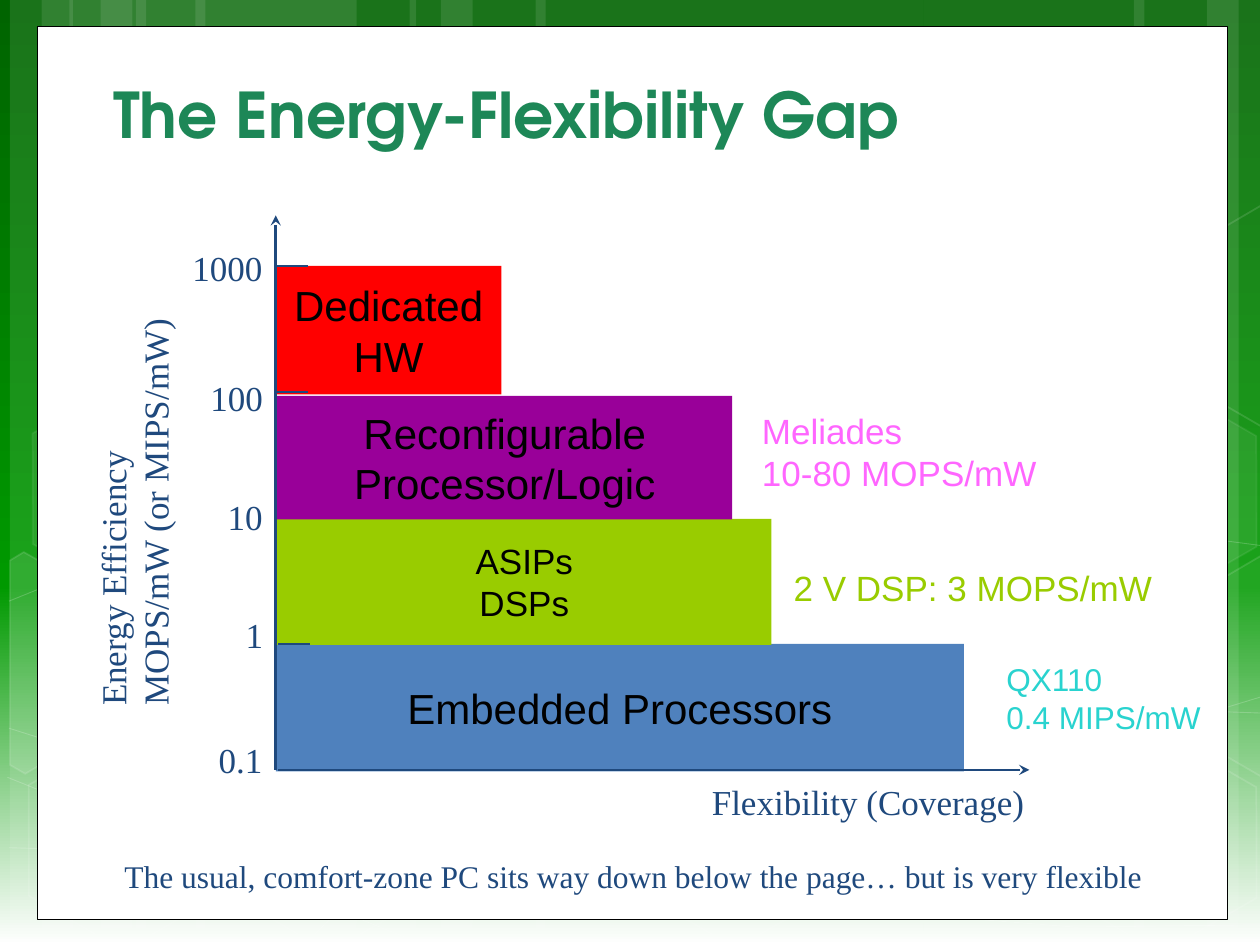
from copy import deepcopy
from dataclasses import dataclass

from lxml import etree
from pptx import Presentation
from pptx import util as u
from pptx.dml import color
from pptx.enum import shapes, text
from pptx.oxml import ns


@dataclass(frozen=True)
class Theme:
    ink: str = "1F497D"
    title: str = "1D8757"
    white: str = "FFFFFF"
    black: str = "000000"
    blue: str = "4F81BD"
    cyan: str = "29D3CF"
    lime: str = "99CC00"
    red: str = "FF0000"
    purple: str = "990099"
    pink: str = "FF66FF"
    backdrop: tuple = ((0, "006400"), (62, "009900"), (100, "FFFFFF"))
    sans: str = "Arial"
    serif: str = "Times New Roman"
    display: str = "TeX Gyre Adventor"
    heading: int = 36
    large: int = 24
    medium: int = 20
    small: int = 18


THEME = Theme()
AXIS_X, AXIS_Y = 5.56, 15.52

STRIPS = [(2.74, 4.45), (0.2, 1.27), (0.84, 2.11), (3.94, 4.45),
          (1.4, 1.27), (2.03, 2.11), (18.62, 4.45), (24.33, 1.27),
          (22.86, 2.11), (10.8, 7.82), (8.26, 1.27), (8.89, 2.11)]
WAVES = [
    [(0.18, 17.09), (4.83, 17.22), (11.63, 16.89), (20.12, 15.67), (25.58, 14)],
    [(0.18, 12.12), (3.07, 10.95), (8.81, 9.83), (16.61, 9.83), (25.58, 11.02)],
    [(0.15, 15.67), (8.48, 19.02)],
    [(0.18, 14.68), (3.25, 15.65), (9.07, 17.09), (15.95, 18.24),
     (21.67, 18.69), (25.58, 18.64)],
    [(6.15, 19.02), (7.67, 17.55), (9.86, 16.23), (11.94, 15.47),
     (15.44, 14.68), (20.17, 14.27), (22.5, 14.27), (25.55, 14.38)],
]
HEXAGONS = [(12.62, 14.96, 6, 12), (0.28, 15.01, 0, 12), (0.36, 7.92, 7, 8),
            (4.42, 15.04, 0, 12), (21.18, 15.06, 0, 12), (21.18, 7.98, 7, 8)]
CUT_HEXAGONS = [
    (10, [(0.2, 11.3), (0.48, 11.13), (2.44, 12.24), (2.41, 14.48),
          (0.51, 15.6), (0.2, 15.42)]),
    (4, [(23.52, 12.32), (25.43, 11.2), (25.63, 11.33), (25.63, 15.57),
         (25.45, 15.67), (23.52, 14.55)]),
    (0, [(23.52, 5.26), (25.43, 4.14), (25.65, 4.27), (25.63, 8.51),
         (25.45, 8.61), (23.52, 7.49)]),
]
SCALE = [("1000", 4.85, 1.93), ("100", 7.47, 1.57), ("10", 9.86, 1.22),
         ("1", 12.24, 0.86), ("0.1", 14.76, 1.4)]


def rgb(code):
    return color.RGBColor.from_string(code)


def cm(*lengths):
    return [u.Cm(length) for length in lengths]


def set_all(target, values):
    for name, value in values.items():
        setattr(target, name, value)


def paint(fill, code, opacity=100):
    if not opacity:
        fill.background()
        return
    fill.solid()
    fill.fore_color.rgb = rgb(code)


def fade(part, opacity):
    for tint in part.iter(ns.qn("a:srgbClr")):
        etree.SubElement(tint, ns.qn("a:alpha"), val=str(opacity * 1000))


def finish(shape, fill, fill_opacity=100, line=None, width=1, line_opacity=100):
    shape.shadow.inherit = False
    paint(shape.fill, fill, fill_opacity)
    if fill_opacity not in (0, 100):
        fade(shape.element.spPr.find(ns.qn("a:solidFill")), fill_opacity)
    if line is None:
        shape.line.fill.background()
        return
    paint(shape.line.fill, line)
    shape.line.width = u.Pt(width)
    if line_opacity != 100:
        fade(shape.element.spPr.find(ns.qn("a:ln")), line_opacity)


def write(frame, words, font, size, code, align=text.PP_ALIGN.LEFT,
          anchor=text.MSO_ANCHOR.TOP, bold=False, wrap=False):
    frame.text = words
    set_all(frame, {"word_wrap": wrap, "vertical_anchor": anchor})
    for paragraph in frame.paragraphs:
        paragraph.alignment = align
        for run in paragraph.runs:
            set_all(run.font, {"name": font, "size": u.Pt(size), "bold": bold})
            run.font.color.rgb = rgb(code)


def add_block(slide, box, kind=shapes.MSO_SHAPE.RECTANGLE, **look):
    block = slide.shapes.add_shape(kind, *cm(*box))
    finish(block, **look)
    return block


def add_outline(slide, points, closed, **look):
    corners = [tuple(cm(*point)) for point in points]
    builder = slide.shapes.build_freeform(*corners[0])
    builder.add_line_segments(corners[1:], close=closed)
    finish(builder.convert_to_shape(), **look)


def add_bar(slide, words, box, fill, size=THEME.large):
    bar = add_block(slide, box, fill=fill)
    write(bar.text_frame, words, THEME.sans, size, THEME.black,
          text.PP_ALIGN.CENTER, text.MSO_ANCHOR.MIDDLE)


def add_label(slide, words, box, code=THEME.ink, font=THEME.serif,
              size=THEME.medium, rotation=0):
    label = slide.shapes.add_textbox(*cm(*box))
    label.rotation = rotation
    write(label.text_frame, words, font, size, code)
    label.text_frame.auto_size = text.MSO_AUTO_SIZE.SHAPE_TO_FIT_TEXT


def add_line(slide, start, end, arrow=False):
    line = slide.shapes.add_connector(
        shapes.MSO_CONNECTOR.STRAIGHT, *cm(*start), *cm(*end))
    paint(line.line.fill, THEME.ink)
    line.line.width = u.Pt(1.5)
    properties = line.element.spPr
    if arrow:
        etree.SubElement(properties.find(ns.qn("a:ln")),
                         ns.qn("a:tailEnd"), type="stealth")
    etree.SubElement(properties, ns.qn("a:effectLst"))


def add_backdrop(slide):
    fill = slide.background.fill
    fill.gradient()
    fill.gradient_angle = 270
    stops = slide.element.find(".//" + ns.qn("a:gsLst"))
    stops.append(deepcopy(stops[0]))
    for stop, (position, code) in zip(fill.gradient_stops, THEME.backdrop):
        stop.position = position / 100
        stop.color.rgb = rgb(code)

    for left, width in STRIPS:
        add_block(slide, (left, 0, width, 19.05), fill=THEME.white,
                  fill_opacity=10)
    for wave in WAVES:
        add_outline(slide, wave, False, fill=THEME.white, fill_opacity=0,
                    line=THEME.white, width=0.5, line_opacity=20)
    for left, top, inside, edge in HEXAGONS:
        hexagon = add_block(slide, (left, top, 4.45, 3.86),
                            shapes.MSO_SHAPE.HEXAGON, fill=THEME.white,
                            fill_opacity=inside, line=THEME.white,
                            line_opacity=edge)
        hexagon.adjustments[0] = 0.29
        hexagon.rotation = 30
    for inside, corners in CUT_HEXAGONS:
        add_outline(slide, corners, True, fill=THEME.white,
                    fill_opacity=inside, line=THEME.white, line_opacity=12)
    add_block(slide, (0.76, 0.53, 23.98, 18.01), fill=THEME.white,
              line=THEME.black, width=0.5)


def add_title(slide):
    title = slide.shapes.title
    set_all(title, dict(zip(("left", "top", "width", "height"),
                            cm(2.03, 1.24, 21.39, 1.93))))
    write(title.text_frame, "The Energy-Flexibility Gap", THEME.display,
          THEME.heading, THEME.title, anchor=text.MSO_ANCHOR.BOTTOM,
          bold=True, wrap=True)
    slide.shapes.element.append(title.element)


def add_axes(slide):
    add_line(slide, (AXIS_X, AXIS_Y), (AXIS_X, 4.34), arrow=True)
    add_line(slide, (5.61, AXIS_Y), (20.75, AXIS_Y), arrow=True)
    for step, left in enumerate((5.61, 5.61, AXIS_X, AXIS_X), start=1):
        height = AXIS_Y - 2.54 * step
        add_line(slide, (left, height), (left + 0.64, height))
    add_label(slide, "Flexibility (Coverage)", (14.1, 15.6, 7.06, 1.09))
    add_label(slide, "Energy Efficiency\nMOPS/mW (or MIPS/mW)",
              (-1.68, 9.12, 8.76, 1.96), rotation=270)
    for value, top, width in SCALE:
        add_label(slide, value, (AXIS_X - width, top, width, 1.09))


def main():
    deck = Presentation()
    set_all(deck, {"slide_width": u.Cm(25.4), "slide_height": u.Cm(19.05)})
    slide = deck.slides.add_slide(deck.slide_layouts[5])
    add_backdrop(slide)
    add_title(slide)
    add_bar(slide, "Embedded Processors", (5.56, 12.98, 13.87, 2.57), THEME.blue)
    add_label(slide, "QX110\n0.4 MIPS/mW", (20.04, 13.18, 4.47, 1.78),
              THEME.cyan, THEME.sans, THEME.small)
    add_bar(slide, "ASIPs\nDSPs", (5.59, 10.46, 9.96, 2.54), THEME.lime,
            THEME.medium)
    add_label(slide, "2 V DSP: 3 MOPS/mW", (15.75, 11.3, 7.8, 1.09),
              THEME.lime, THEME.sans)
    add_bar(slide, "Dedicated\nHW", (5.56, 5.36, 4.55, 2.59), THEME.red)
    add_axes(slide)
    add_bar(slide, "Reconfigurable\vProcessor/Logic",
            (5.59, 7.98, 9.17, 2.49), THEME.purple)
    add_label(slide, "Meliades\n10-80 MOPS/mW", (15.11, 8.13, 6.07, 1.96),
              THEME.pink, THEME.sans)
    add_label(slide, "The usual, comfort-zone PC sits way down below the page… "
              "but is very flexible", (2.26, 17.15, 21.08, 1.02),
              size=THEME.small)
    deck.save("out.pptx")


if __name__ == "__main__":
    main()
